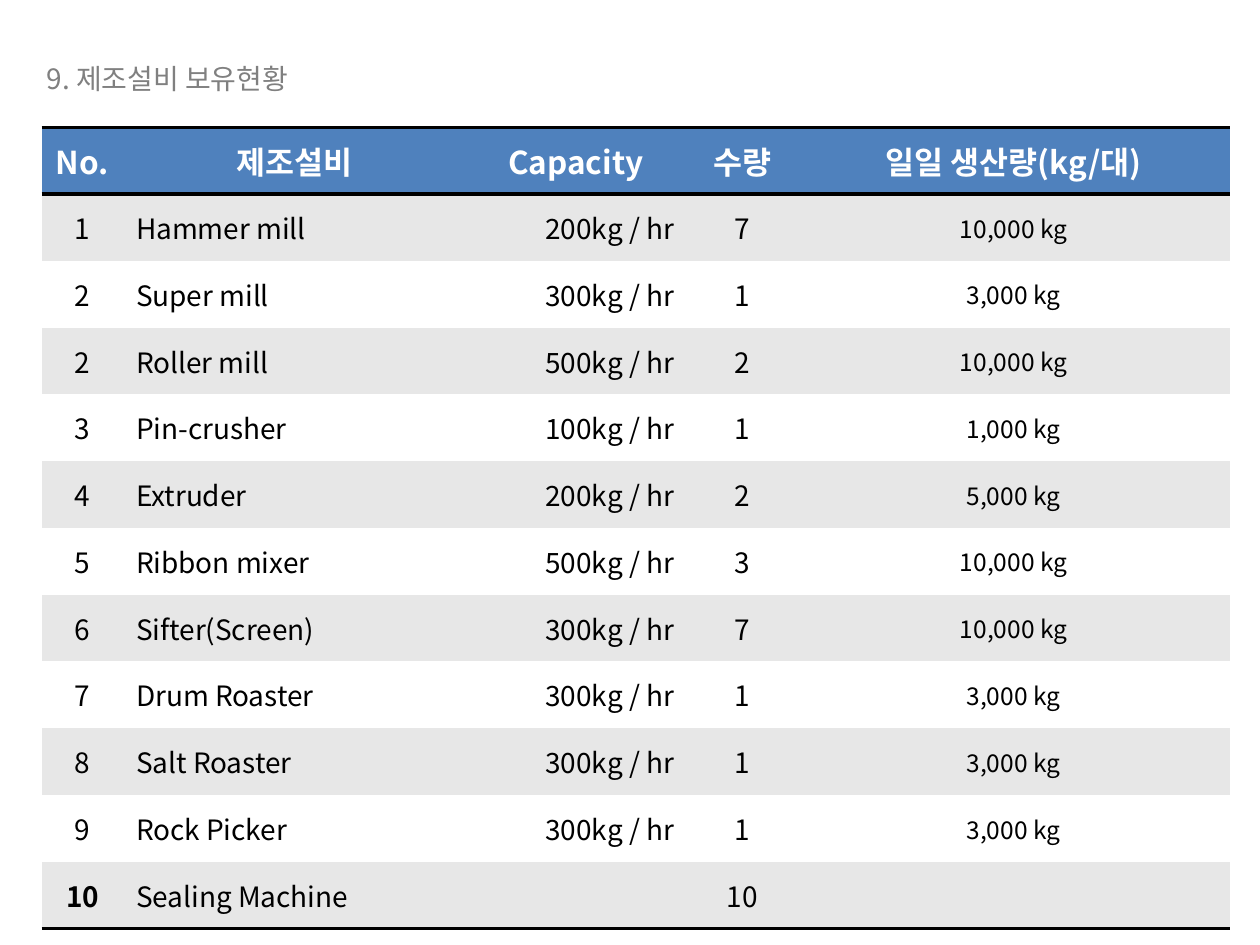
"""Build the slide listing the manufacturing equipment on hand."""
from lxml import etree
from pptx import Presentation
from pptx.dml.color import RGBColor
from pptx.enum.text import MSO_ANCHOR, MSO_AUTO_SIZE, PP_ALIGN
from pptx.oxml.ns import qn
from pptx.util import Inches, Pt

LEFT, CENTER, RIGHT = PP_ALIGN.LEFT, PP_ALIGN.CENTER, PP_ALIGN.RIGHT
TOP, MIDDLE = MSO_ANCHOR.TOP, MSO_ANCHOR.MIDDLE
FIT_SHAPE = MSO_AUTO_SIZE.SHAPE_TO_FIT_TEXT
FONT = "Noto Sans CJK KR"
NO_STYLE = "{2D5ABB26-0587-4C30-8999-92F81FD0307C}"
BLACK = RGBColor(0x00, 0x00, 0x00)
WHITE = RGBColor(0xFF, 0xFF, 0xFF)
GRAY = RGBColor(0x80, 0x80, 0x80)
BLUE = RGBColor(0x4F, 0x81, 0xBD)
BAND = RGBColor(0xE7, 0xE7, 0xE7)

HEADINGS = ["No.", "제조설비", "Capacity", "수량", "일일 생산량(kg/대)"]
EQUIPMENT = [
    ("1", "Hammer mill", "200kg / hr", "7", "10,000 kg"),
    ("2", "Super mill", "300kg / hr", "1", "3,000 kg"),
    ("2", "Roller mill", "500kg / hr", "2", "10,000 kg"),
    ("3", "Pin-crusher", "100kg / hr", "1", "1,000 kg"),
    ("4", "Extruder", "200kg / hr", "2", "5,000 kg"),
    ("5", "Ribbon mixer", "500kg / hr", "3", "10,000 kg"),
    ("6", "Sifter(Screen)", "300kg / hr", "7", "10,000 kg"),
    ("7", "Drum Roaster", "300kg / hr", "1", "3,000 kg"),
    ("8", "Salt Roaster", "300kg / hr", "1", "3,000 kg"),
    ("9", "Rock Picker", "300kg / hr", "1", "3,000 kg"),
    ("10", "Sealing Machine", "", "10", ""),
]
COLUMN_WIDTHS = [0.65, 2.71, 1.76, 0.88, 3.43]
BODY_ALIGNMENTS = [CENTER, LEFT, RIGHT, CENTER, CENTER]
BODY_SIZES = [16, 16, 16, 16, 14]
ROW_HEIGHT = 0.53


def add_text(paragraph, text, size, color, bold=False, align=LEFT):
    paragraph.alignment = align
    run = paragraph.add_run()
    run.text = text
    run.font.name = FONT
    run.font.size = Pt(size)
    run.font.bold = bold
    run.font.color.rgb = color
    east_asian = etree.SubElement(run.font._element, qn("a:ea"))
    east_asian.set("typeface", FONT)


def add_rule(cell, side):
    rule = etree.Element(qn(f"a:ln{side}"), w=str(Pt(2)))
    fill = etree.SubElement(rule, qn("a:solidFill"))
    etree.SubElement(fill, qn("a:srgbClr"), val=str(BLACK))
    cell._tc.get_or_add_tcPr().insert(0, rule)


prs = Presentation()
prs.slide_width = Inches(10)
prs.slide_height = Inches(7.5)
slide = prs.slides.add_slide(prs.slide_layouts[5])

title = slide.shapes.title
title.left, title.top = Inches(0.27), Inches(0.44)
title.width, title.height = Inches(3.83), Inches(0.37)
title.text_frame.auto_size = FIT_SHAPE
title.text_frame.word_wrap = True
title.text_frame.vertical_anchor = TOP
add_text(title.text_frame.paragraphs[0], "9. 제조설비 보유현황", 16, GRAY)

rows = [HEADINGS, *EQUIPMENT]
last_row = len(rows) - 1
equipment_frame = slide.shapes.add_table(
    len(rows), len(HEADINGS), Inches(0.33), Inches(1.01),
    Inches(sum(COLUMN_WIDTHS)), Inches(ROW_HEIGHT * len(rows)))
equipment = equipment_frame.table
equipment.first_row = False
equipment.horz_banding = False
equipment._tbl.tblPr.find(qn("a:tableStyleId")).text = NO_STYLE
for column, width in zip(equipment.columns, COLUMN_WIDTHS):
    column.width = Inches(width)

for r, values in enumerate(rows):
    equipment.rows[r].height = Inches(ROW_HEIGHT)
    for c, value in enumerate(values):
        cell = equipment.cell(r, c)
        cell.vertical_anchor = MIDDLE
        cell.fill.solid()
        cell.fill.fore_color.rgb = BLUE if r == 0 else BAND if r % 2 else WHITE
        if r in (0, last_row):
            add_rule(cell, "B")
        if r == 0:
            add_rule(cell, "T")
            add_text(cell.text_frame.paragraphs[0], value, 18, WHITE, True, CENTER)
        elif value:
            add_text(cell.text_frame.paragraphs[0], value, BODY_SIZES[c], BLACK,
                     r == last_row and c == 0, BODY_ALIGNMENTS[c])

prs.save("out.pptx")
